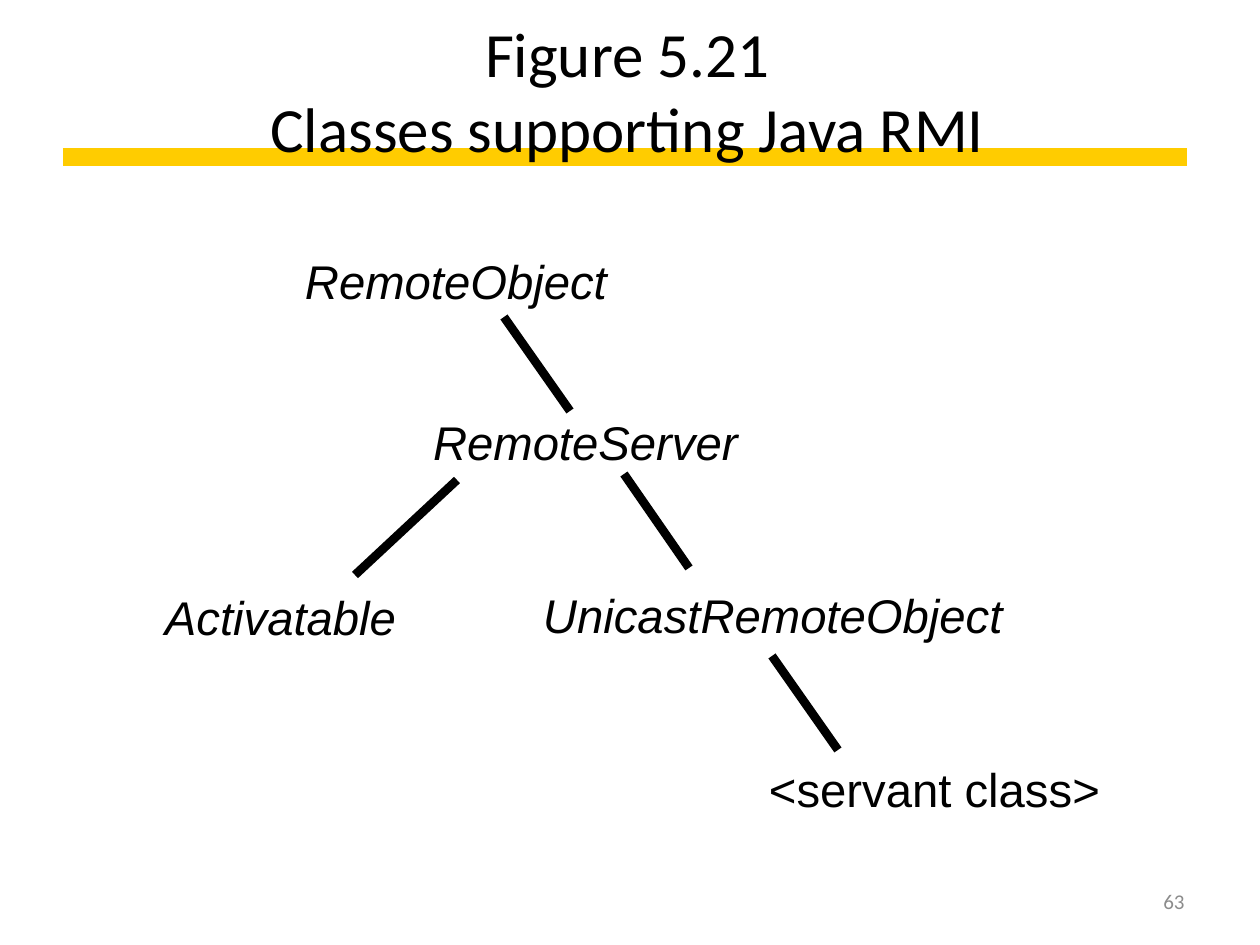
"""Build the slide showing the classes that support Java RMI."""
from dataclasses import dataclass

from lxml.etree import SubElement
from pptx import Presentation
from pptx.dml.color import RGBColor
from pptx.enum.shapes import MSO_CONNECTOR as Connector
from pptx.enum.text import MSO_ANCHOR as Anchor, MSO_AUTO_SIZE as AutoSize, PP_ALIGN as Align
from pptx.oxml.ns import qn
from pptx.util import Emu, Pt

BLACK = RGBColor(0x00, 0x00, 0x00)
GOLD = RGBColor(0xFF, 0xCC, 0x00)
GREY = RGBColor(0x8C, 0x8C, 0x8C)
EMU_PER_PX = 914400 // 126
LABEL_HEIGHT = 62


@dataclass(frozen=True)
class ClassLabel:
    """A class name and its place in the tree."""
    name: str
    left: int
    top: int
    width: int
    italic: bool = True


@dataclass(frozen=True)
class Line:
    """A straight stroke between two points."""
    x1: int
    y1: int
    x2: int
    y2: int
    color: RGBColor = BLACK
    weight: int = 5


LABELS = (
    ClassLabel("RemoteObject", 305, 252, 348),
    ClassLabel("RemoteServer", 433, 413, 350),
    ClassLabel("Activatable", 165, 588, 268),
    ClassLabel("UnicastRemoteObject", 543, 586, 522),
    ClassLabel("<servant class>", 769, 760, 367, italic=False),
)
BRANCHES = (
    Line(504, 317, 570, 411),
    Line(457, 480, 355, 575),
    Line(624, 474, 689, 568),
    Line(772, 656, 838, 750),
)
RULE = Line(63, 157, 1187, 157, GOLD, 10)


def px(length: int) -> Emu:
    """Turn pixels into EMU."""
    return Emu(length * EMU_PER_PX)


def place(box, left: int, top: int, width: int, height: int) -> None:
    """Move and size a shape."""
    box.left, box.top, box.width, box.height = map(px, (left, top, width, height))


def write(box, text: str, font: str, size: int, color: RGBColor,
          align: Align, italic: bool = False):
    """Put one formatted paragraph in a shape and return its frame."""
    frame = box.text_frame
    frame.word_wrap = True
    frame.auto_size = AutoSize.NONE
    para = frame.paragraphs[0]
    para.text = text
    para.alignment = align
    para.font.name = font
    para.font.size = Pt(size)
    para.font.italic = italic
    para.font.color.rgb = color
    return frame


def draw_line(page, line: Line):
    """Draw a stroke without a shadow."""
    ends = map(px, (line.x1, line.y1, line.x2, line.y2))
    stroke = page.shapes.add_connector(Connector.STRAIGHT, *ends)
    stroke.line.color.rgb = line.color
    stroke.line.width = Pt(line.weight)
    SubElement(stroke._element.spPr, qn("a:effectLst"))
    return stroke


def draw_label(page, label: ClassLabel) -> None:
    """Draw a class name without insets."""
    box = page.shapes.add_textbox(px(label.left), px(label.top), px(label.width), px(LABEL_HEIGHT))
    frame = write(box, label.name, "Arial", 27, BLACK, Align.LEFT, label.italic)
    frame.margin_left = frame.margin_right = frame.margin_top = frame.margin_bottom = 0


def main() -> None:
    """Build and save the deck."""
    deck = Presentation()
    deck.slide_width, deck.slide_height = px(1260), px(945)
    page = deck.slides.add_slide(deck.slide_layouts[5])

    title = page.shapes.title
    place(title, 63, 11, 1134, 158)
    frame = write(title, "Figure 5.21\vClasses supporting Java RMI", "Calibri", 36, BLACK, Align.CENTER)
    frame.vertical_anchor = Anchor.MIDDLE
    frame.margin_right = px(18)

    rule = draw_line(page, RULE)
    title._element.addprevious(rule._element)

    for label in LABELS:
        draw_label(page, label)
    for branch in BRANCHES:
        draw_line(page, branch)

    number = page.shapes.add_textbox(px(903), px(876), px(294), px(50))
    write(number, "63", "Calibri", 12, GREY, Align.RIGHT).vertical_anchor = Anchor.MIDDLE

    deck.save("out.pptx")


if __name__ == "__main__":
    main()
